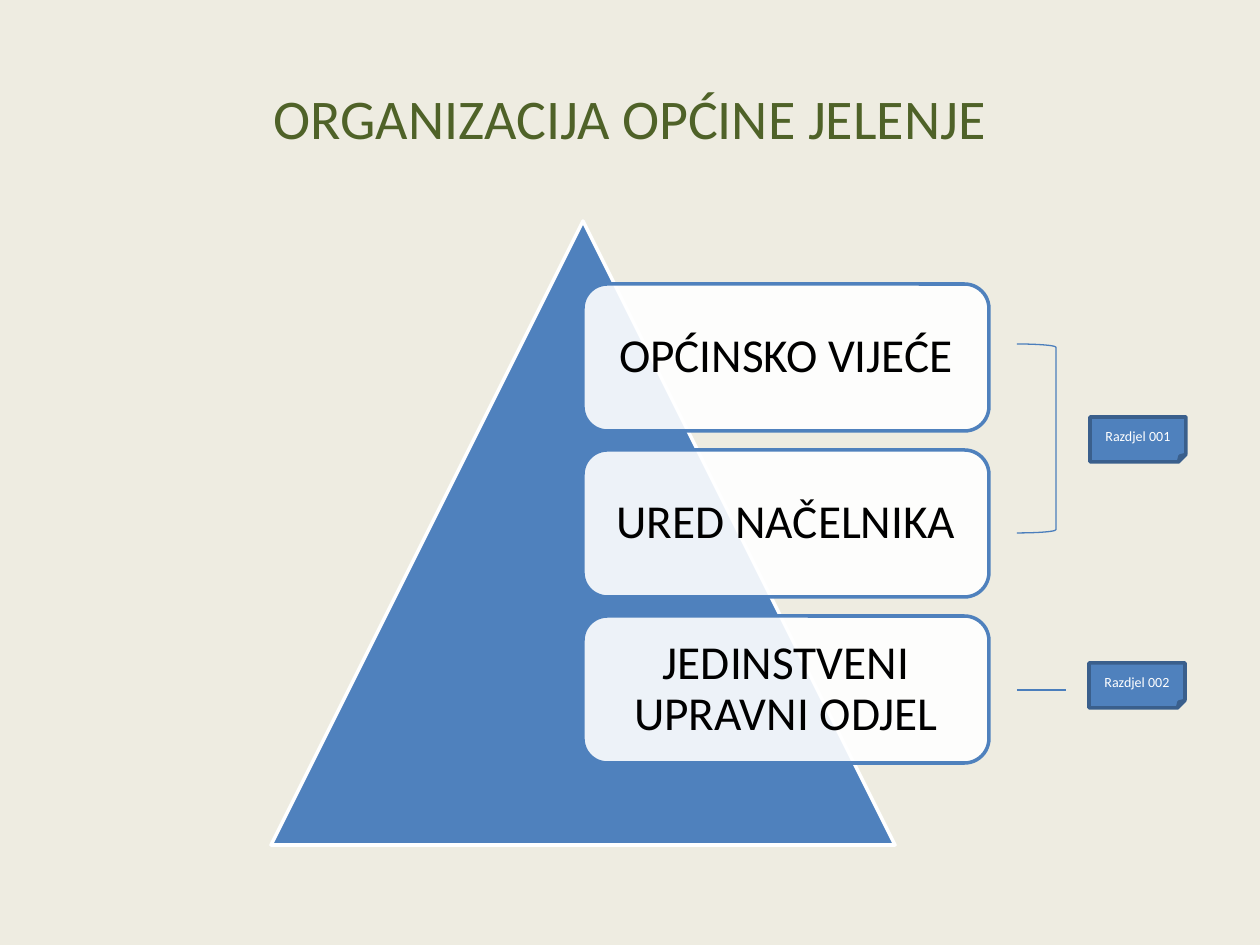
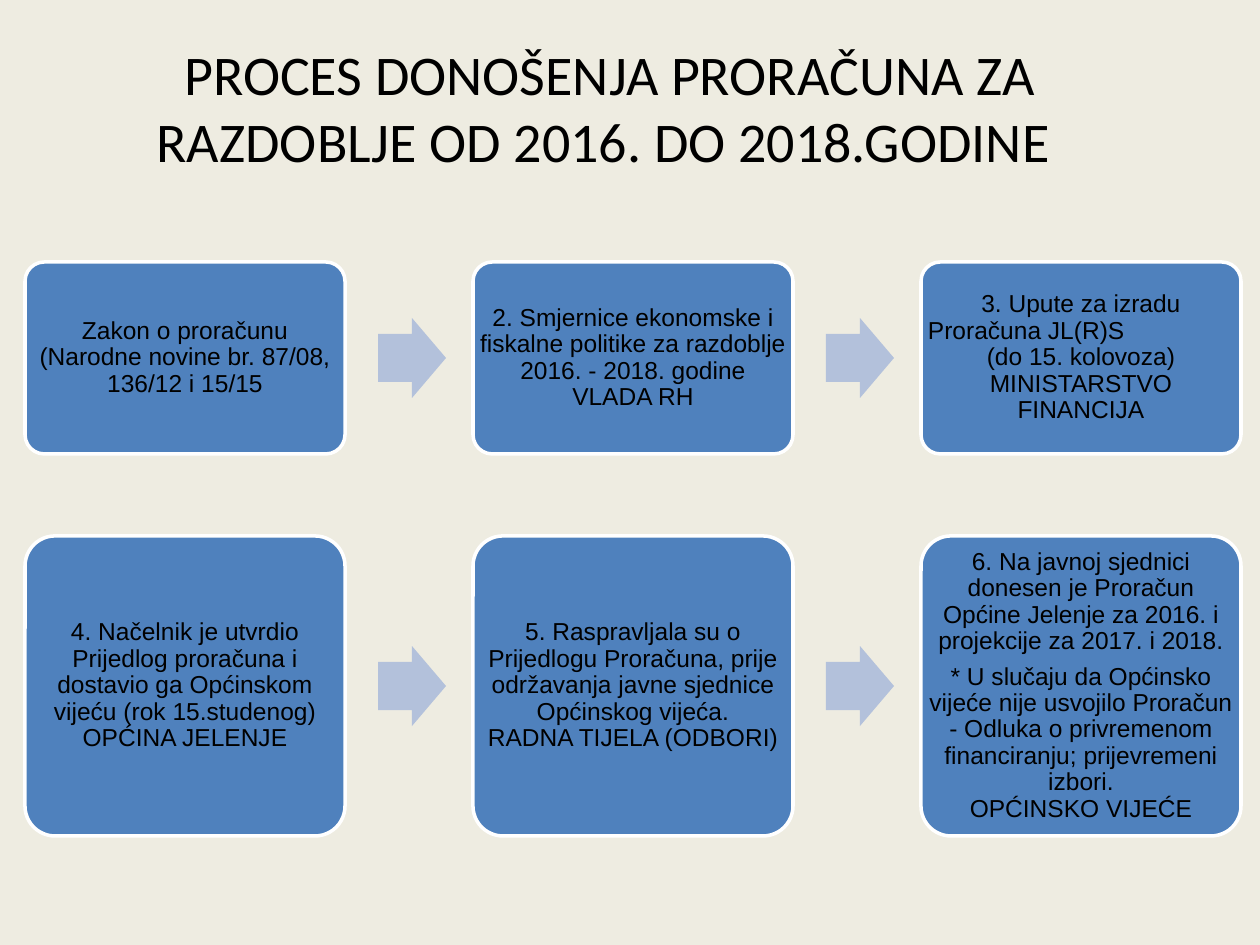
from lxml.etree import SubElement
from pptx import Presentation
from pptx.dml.color import RGBColor
from pptx.enum.shapes import MSO_CONNECTOR, MSO_SHAPE as Shape
from pptx.enum.text import MSO_ANCHOR, PP_ALIGN
from pptx.oxml.ns import qn
from pptx.util import Emu, Pt

COLORS = {
    "background": "EEECE1",
    "green": "4F6228",
    "black": "000000",
    "white": "FFFFFF",
    "blue": "4F81BD",
    "rule": "4B7EBC",
    "note_edge": "3A5F8C",
    "arrow": "B3C1DB",
}
TITLE_FORMAT = {"name": "Calibri", "size": 32}
BODY_FORMAT = {"name": "Calibri", "size": 27}
NOTE_FORMAT = {"name": "Calibri", "size": 8}
STEP_FORMAT = {"name": "Arial", "size": 14}

ORGANIZATION = {
    "title": "ORGANIZACIJA OPĆINE JELENJE",
    "title_box": (63, 38, 1134, 158),
    "title_color": "green",
    "bodies": ["OPĆINSKO VIJEĆE", "URED NAČELNIKA", "JEDINSTVENI UPRAVNI ODJEL"],
    "notes": [("Razdjel 001", 1090, 417), ("Razdjel 002", 1089, 663)],
}
PROCESS = {
    "title": "PROCES DONOŠENJA PRORAČUNA ZA RAZDOBLJE OD 2016. DO 2018.GODINE ",
    "title_box": (43, 32, 1134, 150),
    "title_color": "black",
}
STEP_ROWS = [
    (262, 192, [
        [("Zakon o proračunu (Narodne novine br. 87/08, 136/12 i 15/15", {})],
        [("2. Smjernice ekonomske i fiskalne politike za razdoblje 2016. - 2018. godine", {}),
         ("VLADA RH", {})],
        [("3. Upute za izradu", {}),
         ("Proračuna JL(R)S", {"alignment": PP_ALIGN.LEFT}),
         ("(do 15. kolovoza)", {}),
         ("MINISTARSTVO FINANCIJA", {})],
    ]),
    (536, 300, [
        [("4. Načelnik je utvrdio Prijedlog proračuna i dostavio ga Općinskom vijeću "
          "(rok 15.studenog) OPĆINA JELENJE", {})],
        [("5. Raspravljala su o Prijedlogu Proračuna, prije održavanja javne sjednice "
          "Općinskog vijeća.", {}),
         ("RADNA TIJELA (ODBORI)", {})],
        [("6. Na javnoj sjednici donesen je Proračun Općine Jelenje za 2016. i "
          "projekcije za 2017. i 2018.", {"space_after": Pt(5)}),
         ("* U slučaju da Općinsko vijeće nije usvojilo Proračun - Odluka o privremenom "
          "financiranju; prijevremeni izbori.", {}),
         ("OPĆINSKO VIJEĆE", {})],
    ]),
]

BODY_LEFT, BODY_TOP, BODY_WIDTH, BODY_HEIGHT, BODY_PITCH = 583, 284, 406, 147, 166
STEP_LEFT, STEP_WIDTH, STEP_PITCH = 25, 320, 448
ARROW_OFFSET, ARROW_WIDTH, ARROW_HEIGHT = 353, 68, 80
EMU_PER_PX = 914400 / 126


def px(length):
    return Emu(round(length * EMU_PER_PX))


def color(name):
    return RGBColor.from_string(COLORS[name])


def write(box, lines, font, ink, inset=None, spacing=1.0):
    frame = box.text_frame
    frame.word_wrap = True
    frame.vertical_anchor = MSO_ANCHOR.MIDDLE
    if inset is not None:
        for side in ("left", "top", "right", "bottom"):
            setattr(frame, f"margin_{side}", px(inset))
    for index, (text, overrides) in enumerate(lines):
        para = frame.paragraphs[0] if index == 0 else frame.add_paragraph()
        layout = {"alignment": PP_ALIGN.CENTER, "line_spacing": spacing, "space_after": Pt(0)}
        for key, value in (layout | overrides).items():
            setattr(para, key, value)
        span = para.add_run()
        span.text = text
        for key, value in font.items():
            setattr(span.font, key, Pt(value) if key == "size" else value)
        span.font.color.rgb = color(ink)


def add_label(page, place, lines, font, ink="black", **layout):
    box = page.shapes.add_textbox(*map(px, place))
    write(box, lines, font, ink, **layout)


def add_figure(page, kind, place, fill=None, edge=None, weight=2, adjust=()):
    figure = page.shapes.add_shape(kind, *map(px, place))
    figure.shadow.inherit = False
    for index, value in enumerate(adjust):
        figure.adjustments[index] = value
    if fill:
        figure.fill.solid()
        figure.fill.fore_color.rgb = color(fill)
    else:
        figure.fill.background()
    if edge:
        figure.line.color.rgb = color(edge)
        figure.line.width = Pt(weight)
    else:
        figure.line.fill.background()
    return figure


def set_opacity(figure, percent):
    tint = figure.fill._xPr.find(qn("a:solidFill"))[0]
    SubElement(tint, qn("a:alpha"), val=str(percent * 1000))


def add_rule(page, start, end):
    rule = page.shapes.add_connector(MSO_CONNECTOR.STRAIGHT, *map(px, start + end))
    rule.line.color.rgb = color("rule")
    rule.line.width = Pt(0.75)
    SubElement(rule._element.spPr, qn("a:effectLst"))


def add_page(deck, content):
    page = deck.slides.add_slide(deck.slide_layouts[6])
    add_label(page, content["title_box"], [(content["title"], {})], TITLE_FORMAT,
              content["title_color"])
    return page


def build_organization(deck):
    page = add_page(deck, ORGANIZATION)
    add_figure(page, Shape.ISOSCELES_TRIANGLE, (271, 221, 624, 624), "blue", "white")
    for row, body in enumerate(ORGANIZATION["bodies"]):
        place = (BODY_LEFT, BODY_TOP + row * BODY_PITCH, BODY_WIDTH, BODY_HEIGHT)
        card = add_figure(page, Shape.ROUNDED_RECTANGLE, place, "white", "blue")
        set_opacity(card, 90)
        add_label(page, place, [(body, {})], BODY_FORMAT, inset=14, spacing=0.9)
    add_figure(page, Shape.RIGHT_BRACKET, (1017, 344, 39, 189), edge="rule", weight=0.75)
    for text, left, top in ORGANIZATION["notes"]:
        note = add_figure(page, Shape.FOLDED_CORNER, (left, top, 96, 45), "blue", "note_edge")
        write(note, [(text, {})], NOTE_FORMAT, "white")
    add_rule(page, (1017, 690), (1066, 690))


def build_process(deck):
    page = add_page(deck, PROCESS)
    for top, height, steps in STEP_ROWS:
        for column, lines in enumerate(steps):
            left = STEP_LEFT + column * STEP_PITCH
            place = (left, top, STEP_WIDTH, height)
            add_figure(page, Shape.ROUNDED_RECTANGLE, place, "blue", "white", adjust=[0.1])
            add_label(page, place, lines, STEP_FORMAT, inset=7, spacing=0.9)
            if column < len(steps) - 1:
                arrow_top = top + (height - ARROW_HEIGHT) // 2
                add_figure(page, Shape.RIGHT_ARROW,
                           (left + ARROW_OFFSET, arrow_top, ARROW_WIDTH, ARROW_HEIGHT),
                           "arrow", adjust=[0.6, 0.5])


def main():
    deck = Presentation()
    deck.slide_width, deck.slide_height = px(1260), px(945)
    backdrop = deck.slide_master.background.fill
    backdrop.solid()
    backdrop.fore_color.rgb = color("background")
    build_organization(deck)
    build_process(deck)
    deck.save("out.pptx")


if __name__ == "__main__":
    main()
